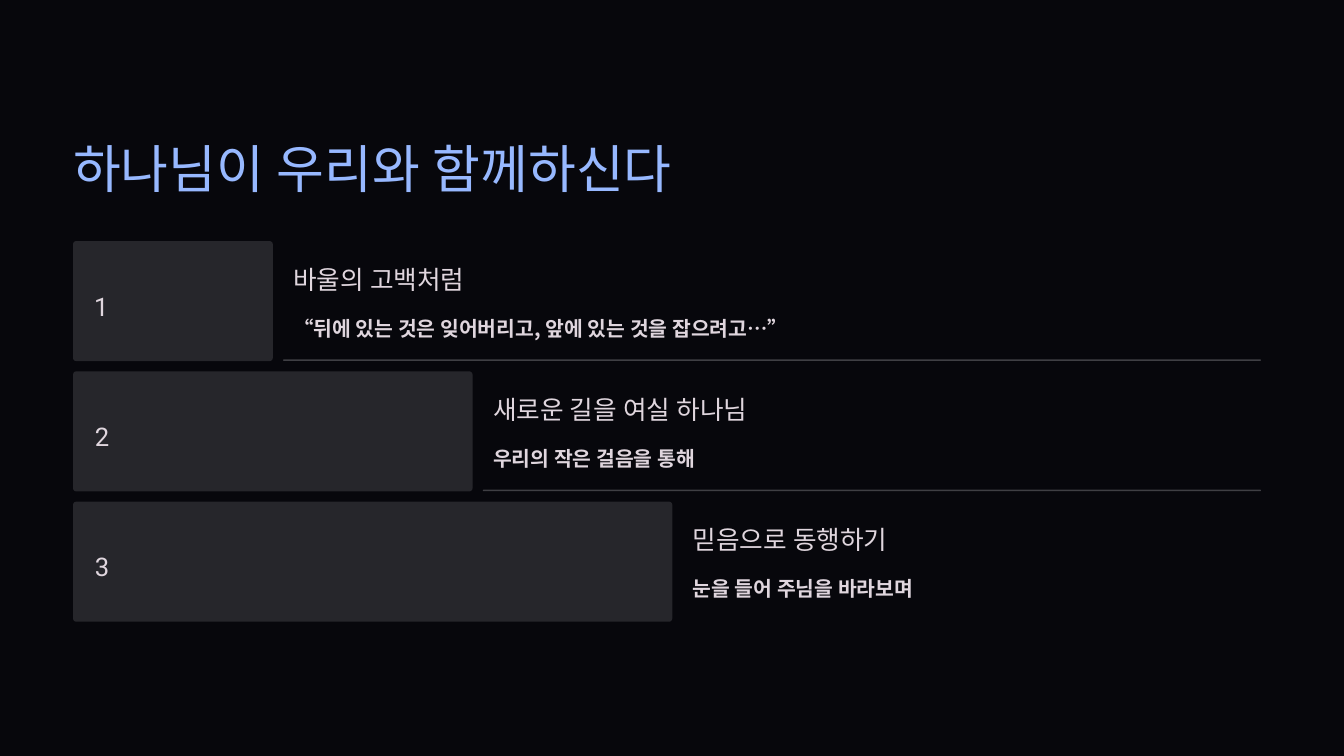
from lxml.etree import SubElement
from pptx import Presentation
from pptx.dml.color import RGBColor
from pptx.enum.shapes import MSO_SHAPE
from pptx.enum.text import MSO_ANCHOR, PP_ALIGN
from pptx.oxml.ns import qn
from pptx.util import Cm, Pt

COLORS = {
    "background": "07070C",
    "title": "97B8FF",
    "text": "E0D6DE",
    "step": "26262B",
    "divider": "3F3F44",
}
LIGHT_FONT = "Roboto"
BOLD_FONT = "Noto Sans CJK KR"

TITLE = "하나님이 우리와 함께하신다"
STEPS = [
    ("바울의 고백처럼", "“뒤에 있는 것은 잊어버리고, 앞에 있는 것을 잡으려고…”"),
    ("새로운 길을 여실 하나님", "우리의 작은 걸음을 통해"),
    ("믿음으로 동행하기", "눈을 들어 주님을 바라보며"),
]

LEFT, RIGHT = 2.21, 38.13
STEPS_TOP, ROW_PITCH, ROW_HEIGHT = 7.29, 3.94, 3.63
STEP_WIDTH = 6.04


def add_text(slide, box, text, size, line_height, color="text",
             font=LIGHT_FONT, bold=False, align=PP_ALIGN.LEFT):
    """Place one unwrapped line of text in box (left, top, width, height in cm)."""
    frame = slide.shapes.add_textbox(*map(Cm, box)).text_frame
    frame.margin_left = frame.margin_right = 0
    frame.margin_top = frame.margin_bottom = 0
    frame.vertical_anchor = MSO_ANCHOR.TOP
    frame.word_wrap = False
    para = frame.paragraphs[0]
    para.alignment = align
    para.line_spacing = Pt(line_height)
    span = para.add_run()
    span.text = text
    span.font.size = Pt(size)
    span.font.bold = bold
    span.font.color.rgb = RGBColor.from_string(COLORS[color])
    span.font.name = font
    SubElement(span.font._element, qn("a:ea"), typeface=font)


def add_panel(slide, box, color, rounding):
    panel = slide.shapes.add_shape(MSO_SHAPE.ROUNDED_RECTANGLE, *map(Cm, box))
    panel.adjustments[0] = rounding
    panel.shadow.inherit = False
    panel.fill.solid()
    panel.fill.fore_color.rgb = RGBColor.from_string(COLORS[color])
    panel.line.fill.background()


def add_step(slide, box, number, heading, detail, divided):
    """Draw a numbered bar, its texts to the right, and the divider below them."""
    left, top, width, height = box
    bar_width = STEP_WIDTH * number
    bar_right = left + bar_width
    text_left = bar_right + 0.62
    text_width = left + width - text_left
    number_width = 0.33 if number == 1 else 0.48

    add_panel(slide, (left, top, bar_width, height), "step", 0.026)
    add_text(slide, (left + 0.64, top + 1.18, number_width, 1.27), str(number),
             22, 35.5, align=PP_ALIGN.CENTER)
    add_text(slide, (text_left, top + 0.64, text_width, 0.99), heading, 22, 27.5)
    add_text(slide, (text_left, top + 1.99, text_width, 1.02), detail,
             17.5, 28.5, font=BOLD_FONT, bold=True)
    if divided:
        line_left = bar_right + 0.31
        add_panel(slide, (line_left, top + height - 0.05, left + width - line_left, 0.04),
                  "divider", 0.5)


def add_steps_slide(deck):
    slide = deck.slides.add_slide(deck.slide_layouts[6])
    slide.background.fill.solid()
    slide.background.fill.fore_color.rgb = RGBColor.from_string(COLORS["background"])
    add_text(slide, (LEFT, 4.06, 18.11, 1.98), TITLE, 44.5, 55.5, color="title")
    for index, (heading, detail) in enumerate(STEPS):
        box = (LEFT, STEPS_TOP + index * ROW_PITCH, RIGHT - LEFT, ROW_HEIGHT)
        add_step(slide, box, index + 1, heading, detail, divided=index < len(STEPS) - 1)


def main():
    deck = Presentation()
    deck.slide_width, deck.slide_height = Cm(40.64), Cm(22.86)
    add_steps_slide(deck)
    deck.save("out.pptx")


if __name__ == "__main__":
    main()
